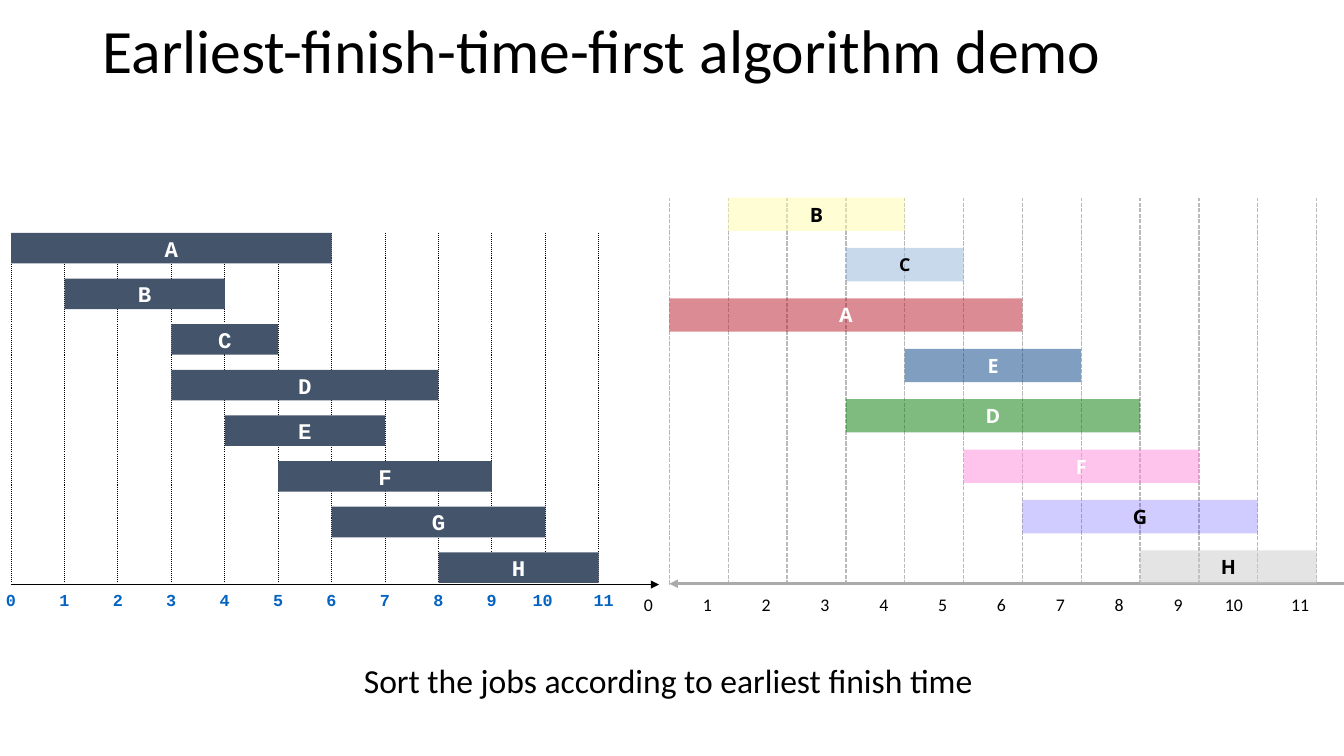
from lxml.etree import SubElement
from pptx import Presentation
from pptx.dml.color import RGBColor
from pptx.enum.dml import MSO_LINE
from pptx.enum.shapes import MSO_CONNECTOR, MSO_SHAPE
from pptx.enum.text import MSO_ANCHOR, PP_ALIGN
from pptx.oxml.ns import qn
from pptx.util import Cm, Pt

COLORS = {
    "black": "000000", "white": "FFFFFF", "slate": "44546A", "blue": "0563C1",
    "grid": "BABABA", "axis": "AAAAAA",
    "yellow": "FFFDA9", "sky": "92B4DB", "red": "B6192B", "navy": "003F83",
    "green": "007600", "pink": "FF8AD8", "violet": "4834FF", "grey": "CBCBCB",
}
# Start and finish time of each job
JOBS = {"A": (0, 6), "B": (1, 4), "C": (3, 5), "D": (3, 8),
        "E": (4, 7), "F": (5, 9), "G": (6, 10), "H": (8, 11)}
# Fill, opacity in percent, label colour and label size in the sorted chart
SORTED_STYLES = {
    "A": ("red", 50, "white", 14.1), "B": ("yellow", 50, "black", 14.1),
    "C": ("sky", 50, "black", 12.7), "D": ("green", 50, "white", 14.1),
    "E": ("navy", 50, "white", 14.1), "F": ("pink", 50, "white", 14.1),
    "G": ("violet", 25, "black", 14.1), "H": ("grey", 50, "black", 14.1),
}
LAST_TIME = 11

# Two charts: jobs by start time, and jobs sorted by finish time
CHARTS = [
    {"order": list(JOBS), "left": 0.28, "top": 5.87, "unit": 14.81 / LAST_TIME,
     "pitch": 1.15, "bar": 0.77, "grid": ("black", 0.75, MSO_LINE.ROUND_DOT),
     "axis": ("black", 1.25), "axis_y": 14.73, "axis_end": 16.61,
     "arrows": {"tailEnd": "triangle"}, "bar_font": "Courier New",
     "label": ("Courier New", 12, "blue", True),
     "label_shift": -0.38, "label_y": 14.73, "label_size": (1.14, 0.76),
     "label_insets": (0.25, 0.13)},
    {"order": sorted(JOBS, key=lambda job: JOBS[job][1]),
     "left": 16.87, "top": 4.98, "unit": 16.31 / LAST_TIME,
     "pitch": 1.27, "bar": 0.84, "grid": ("grid", 1, MSO_LINE.SQUARE_DOT),
     "axis": ("axis", 2), "axis_y": 14.71, "axis_end": 34.82,
     "arrows": {"headEnd": "triangle", "tailEnd": "stealth"}, "bar_font": "Open Sans",
     "label": ("Calibri", 12.7, "black", False),
     "label_shift": -0.64, "label_y": 14.96, "label_size": (1.32, 0.53),
     "label_insets": (0, 0)},
]


def add_line(start, end, color, width):
    line = slide.shapes.add_connector(MSO_CONNECTOR.STRAIGHT, *map(Cm, start + end))
    line.line.color.rgb = RGBColor.from_string(COLORS[color])
    line.line.width = Pt(width)
    SubElement(line._element.spPr, qn("a:effectLst"))
    return line


def write(shape, text, font, size, color, bold=False, align=PP_ALIGN.LEFT):
    paragraph = shape.text_frame.paragraphs[0]
    paragraph.alignment = align
    run = paragraph.add_run()
    run.text = text
    run.font.name = font
    run.font.size = Pt(size)
    run.font.bold = bold
    run.font.color.rgb = RGBColor.from_string(COLORS[color])


presentation = Presentation()
presentation.slide_width = Cm(33.87)
presentation.slide_height = Cm(19.05)
slide = presentation.slides.add_slide(presentation.slide_layouts[5])

# Title
title = slide.shapes.title
title.left, title.top, title.width, title.height = Cm(2.33), Cm(0.38), Cm(29.21), Cm(1.96)
title.text_frame.vertical_anchor = MSO_ANCHOR.MIDDLE
title.text_frame.paragraphs[0].line_spacing = 0.9
write(title, "Earliest-finish-time-first algorithm demo", "Calibri", 44, "black")

for chart in CHARTS:
    # Grid lines and time labels
    grid_color, grid_width, dash = chart["grid"]
    font, size, color, bold = chart["label"]
    for time in range(LAST_TIME + 1):
        x = chart["left"] + time * chart["unit"]
        grid_line = add_line((x, 14.73), (x, chart["top"]), grid_color, grid_width)
        grid_line.line.dash_style = dash

        label_x = x + chart["label_shift"] - (0.19 if time == 10 else 0)
        label = slide.shapes.add_textbox(
            Cm(label_x), Cm(chart["label_y"]), *map(Cm, chart["label_size"]))
        frame = label.text_frame
        frame.word_wrap = True
        side, edge = map(Cm, chart["label_insets"])
        frame.margin_left = frame.margin_right = side
        frame.margin_top = frame.margin_bottom = edge
        write(label, str(time), font, size, color, bold)

    # Time axis
    axis = add_line((chart["left"], chart["axis_y"]),
                    (chart["axis_end"], chart["axis_y"]), *chart["axis"])
    for end, arrow in chart["arrows"].items():
        SubElement(axis.line._get_or_add_ln(), qn("a:" + end), type=arrow)

    # Job bars, one row each
    for row, job in enumerate(chart["order"]):
        start, finish = JOBS[job]
        bar = slide.shapes.add_shape(
            MSO_SHAPE.RECTANGLE,
            Cm(chart["left"] + start * chart["unit"]), Cm(chart["top"] + row * chart["pitch"]),
            Cm((finish - start) * chart["unit"]), Cm(chart["bar"]))
        bar.shadow.inherit = False
        bar.line.fill.background()
        bar.fill.solid()
        fill, opacity, text_color, text_size = ("slate", 100, "white", 16)
        if chart["bar_font"] == "Open Sans":
            fill, opacity, text_color, text_size = SORTED_STYLES[job]
        bar.fill.fore_color.rgb = RGBColor.from_string(COLORS[fill])
        if opacity < 100:
            color_element = bar._element.spPr.find(qn("a:solidFill"))[0]
            SubElement(color_element, qn("a:alpha"), val=str(opacity * 1000))
        bar.text_frame.word_wrap = False
        bar.text_frame.vertical_anchor = MSO_ANCHOR.MIDDLE
        write(bar, job, chart["bar_font"], text_size, text_color, True, PP_ALIGN.CENTER)

# Caption
caption = slide.shapes.add_textbox(Cm(8.92), Cm(16.51), Cm(16), Cm(1.27))
caption.text_frame.word_wrap = False
write(caption, "Sort the jobs according to earliest finish time", "Calibri", 24, "black")

presentation.save("out.pptx")
